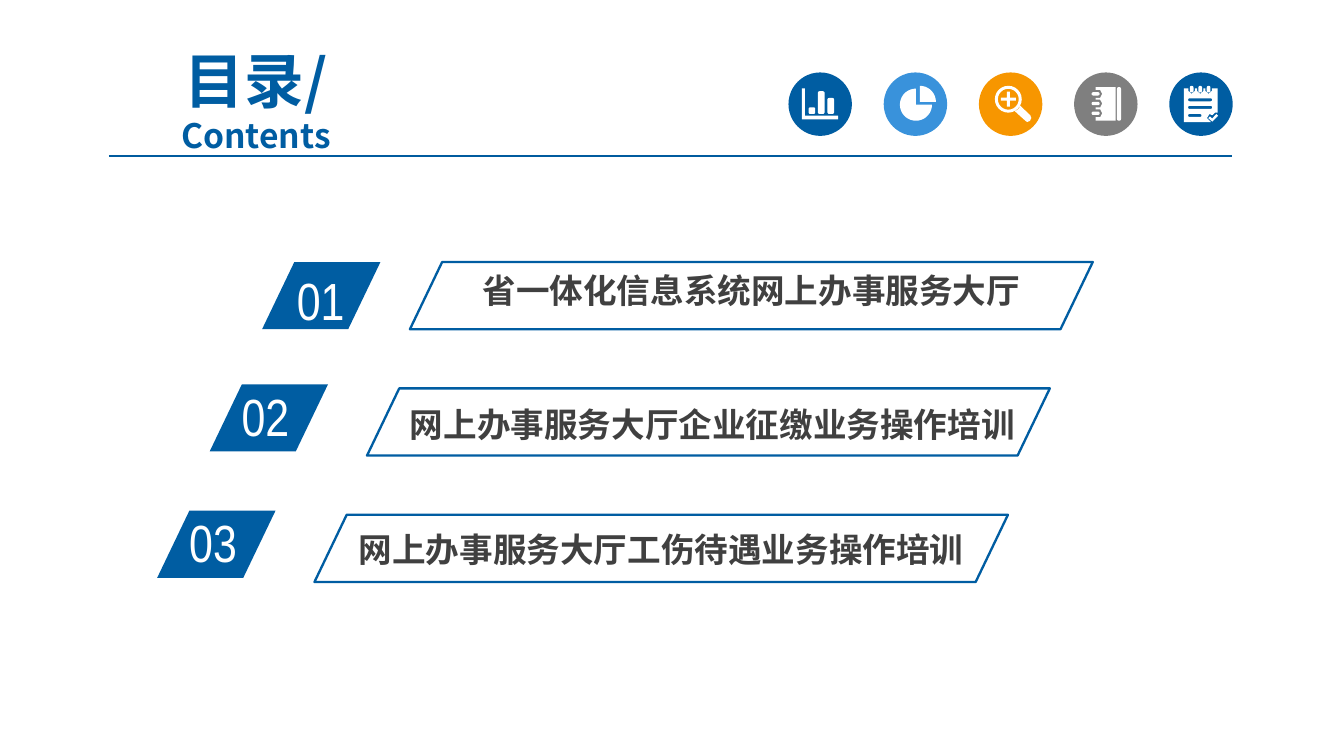
from dataclasses import dataclass
from math import cos, radians, sin

from lxml import etree
from pptx import Presentation
from pptx.dml.color import RGBColor
from pptx.enum.shapes import MSO_CONNECTOR, MSO_SHAPE
from pptx.enum.text import MSO_ANCHOR, MSO_AUTO_SIZE, PP_ALIGN
from pptx.oxml.ns import qn
from pptx.util import Pt

OVAL = MSO_SHAPE.OVAL
PARALLELOGRAM = MSO_SHAPE.PARALLELOGRAM
STRAIGHT = MSO_CONNECTOR.STRAIGHT
MIDDLE = MSO_ANCHOR.MIDDLE
NO_FIT, GROW = MSO_AUTO_SIZE.NONE, MSO_AUTO_SIZE.SHAPE_TO_FIT_TEXT
LEFT, CENTER = PP_ALIGN.LEFT, PP_ALIGN.CENTER


@dataclass(frozen=True)
class Theme:
    blue: RGBColor = RGBColor(0x00, 0x5D, 0xA2)
    rule: RGBColor = RGBColor(0x00, 0x5B, 0x9E)
    sky: RGBColor = RGBColor(0x39, 0x92, 0xDB)
    orange: RGBColor = RGBColor(0xF7, 0x96, 0x00)
    gray: RGBColor = RGBColor(0x7F, 0x7F, 0x7F)
    ink: RGBColor = RGBColor(0x40, 0x40, 0x40)
    white: RGBColor = RGBColor(0xFF, 0xFF, 0xFF)
    heading: str = "Noto Sans CJK SC"
    digits: str = "Arial Narrow"
    title_size: int = 32
    body_size: int = 18
    number_size: int = 28


theme = Theme()


def add_run(paragraph, text, font, size, color, bold):
    run = paragraph.add_run()
    run.text = text
    run.font.name, run.font.size, run.font.bold = font, Pt(size), bold
    run.font.color.rgb = color
    etree.SubElement(run.font._element, qn("a:ea"), typeface=font)


def round_box(left, top, right, bottom, radius):
    """Corner points of a rounded box, clockwise from the top left corner."""
    corners = [(left + radius, top + radius, 180), (right - radius, top + radius, 270),
               (right - radius, bottom - radius, 0), (left + radius, bottom - radius, 90)]
    return [(x + radius * cos(radians(start + turn)), y + radius * sin(radians(start + turn)))
            for x, y, start in corners for turn in range(0, 91, 15)]


prs = Presentation()
prs.slide_width, prs.slide_height = Pt(720), Pt(405)
slide = prs.slides.add_slide(prs.slide_layouts[5])
shapes = slide.shapes

# Title
title = shapes.title
title.left, title.top, title.width, title.height = Pt(48.2), Pt(33.8), Pt(177.8), Pt(38.9)
title.text_frame.word_wrap = True
title.text_frame.auto_size = NO_FIT
title.text_frame.vertical_anchor = MIDDLE
heading = title.text_frame.paragraphs[0]
heading.alignment = CENTER
add_run(heading, "目录/", theme.heading, theme.title_size, theme.blue, True)
heading.add_line_break()
add_run(heading, "Contents", theme.heading, theme.body_size, theme.blue, True)

# Header rule
rule = shapes.add_connector(STRAIGHT, Pt(58.3), Pt(83.5), Pt(660.2), Pt(83.5))
rule.line.color.rgb, rule.line.width = theme.rule, Pt(0.75)
etree.SubElement(rule._element.spPr, qn("a:effectLst"))

# Icon outlines, in points from the top left of each disc
bar_chart = [[(7.2, 8.6), (8.9, 8.6), (8.9, 23.2), (26.6, 23.2), (26.6, 25.2), (7.2, 25.2)]]
for left, top in [(10.8, 18.7), (15.8, 10.1), (20.9, 13.7)]:
    bar_chart.append(round_box(left, top, left + 3.6, 22.3, 1))

pie = []
for x, y, start, end in [(19.4, 15.8, 270, 360), (17.3, 17.3, 0, 270)]:
    pie.append([(x, y)] + [(x + 8.6 * cos(radians(a)), y + 8.6 * sin(radians(a)))
                           for a in range(start, end + 1, 10)])

magnifier = [round_box(15.8 - r, 14.4 - r, 15.8 + r, 14.4 + r, r) for r in (7.2, 5.6)]
magnifier.append([(22.3, 18), (27.6, 23), (28.1, 24.5), (27.4, 26), (26, 26.6),
                  (25, 26), (19.4, 20.9), (21.2, 19.7)])
magnifier.append([(15.8 + x, 14.4 + y) for x, y in [
    (-4, -0.8), (-0.8, -0.8), (-0.8, -4), (0.8, -4), (0.8, -0.8), (4, -0.8),
    (4, 0.8), (0.8, 0.8), (0.8, 4), (-0.8, 4), (-0.8, 0.8), (-4, 0.8)]])

page = [(11.5, 7.9), (22.3, 7.9), (22.3, 25.9), (11.5, 25.9)]
notebook = [page, round_box(23, 7.9, 25.2, 25.9, 1)]
for y in (21.9, 16.7, 11.5):
    page += [(11.5, y + 2.1), (14, y + 2.1), (15.1, y), (14, y - 2.1), (11.5, y - 2.1)]
    notebook.append(round_box(9.4, y - 0.9, 13.7, y + 0.9, 0.9))

sheet = [(25.9, 8.6), (25.9, 21.6), (24.5, 21.6), (23, 23), (21.6, 22.3), (20.2, 24.5),
         (22.3, 26.6), (7.9, 26.6), (7.9, 8.6)]
checklist = [sheet, [(25.2, 22.3), (26.2, 23.2), (23, 26.4), (20.9, 24.5), (21.8, 23.6), (23, 24.7)]]
for x in (12, 16.6, 21.1):
    sheet += [(x - 1.7, 8.6), (x - 1.7, 10), (x, 11.5), (x + 1.7, 10), (x + 1.7, 8.6)]
    checklist.append(round_box(x - 1, 7.2, x + 1, 10.8, 1))
for top, right in [(13.9, 23), (18, 23), (22.3, 17.3)]:
    checklist.append(round_box(10.1, top, right, top + 1.6, 0.8))

# Icon discs
icons = [(theme.blue, bar_chart), (theme.sky, pie), (theme.orange, magnifier),
         (theme.gray, notebook), (theme.blue, checklist)]
for index, (color, outlines) in enumerate(icons):
    left, top = Pt(422.4 + 51 * index), Pt(38.8)
    disc = shapes.add_shape(OVAL, left, top, Pt(34), Pt(34))
    builder = shapes.build_freeform(outlines[0][0][0] * 100, outlines[0][0][1] * 100, scale=Pt(1) / 100)
    for number, outline in enumerate(outlines):
        points = [(x * 100, y * 100) for x, y in outline]
        if number:
            builder.move_to(*points[0])
        builder.add_line_segments(points[1:], close=True)
    symbol = builder.convert_to_shape(left, top)
    for part, fill in [(disc, color), (symbol, theme.white)]:
        part.shadow.inherit = False
        part.fill.solid()
        part.fill.fore_color.rgb = fill
        part.line.fill.background()

# Contents: tab corner, number box, label box, frame
entries = [
    ("01", "省一体化信息系统网上办事服务大厅", CENTER, (140.4, 140.4), (151.9, 140.4, 56.2, 41),
     (238.3, 141.8, 328.3), (219.6, 140.4, 365.8)),
    ("02", "网上办事服务大厅企业征缴业务操作培训", CENTER, (112.3, 205.9), (122.4, 202.3, 60.5, 35.3),
     (202.3, 213.8, 358.6), (196.6, 208.1, 365.8)),
    ("03", "网上办事服务大厅工伤待遇业务操作培训", LEFT, (84.2, 273.6), (94.3, 270, 60.5, 41),
     (187.2, 280.8, 341.3), (168.5, 275.8, 371.5)),
]
for number, topic, alignment, tab_at, number_at, topic_at, frame_at in entries:
    tab = shapes.add_shape(PARALLELOGRAM, *map(Pt, (*tab_at, 63.4, 36)))
    tab.fill.solid()
    tab.fill.fore_color.rgb = theme.blue
    tab.line.fill.background()

    number_box = shapes.add_textbox(*map(Pt, number_at))
    topic_box = shapes.add_textbox(*map(Pt, (*topic_at, 27.4)))
    for box in (number_box, topic_box):
        box.text_frame.word_wrap = True
        box.text_frame.auto_size = GROW
    add_run(number_box.text_frame.paragraphs[0], number, theme.digits, theme.number_size,
            theme.white, False)
    label = topic_box.text_frame
    label.margin_left = label.margin_right = Pt(5)
    label.margin_top = label.margin_bottom = Pt(2.6)
    label.paragraphs[0].alignment = alignment
    add_run(label.paragraphs[0], topic, theme.heading, theme.body_size, theme.ink, True)

    frame = shapes.add_shape(PARALLELOGRAM, *map(Pt, (*frame_at, 36)))
    frame.fill.background()
    frame.line.color.rgb, frame.line.width = theme.blue, Pt(1.25)
    for slanted in (tab, frame):
        slanted.adjustments[0] = 0.48
        slanted.shadow.inherit = False

prs.save("out.pptx")
